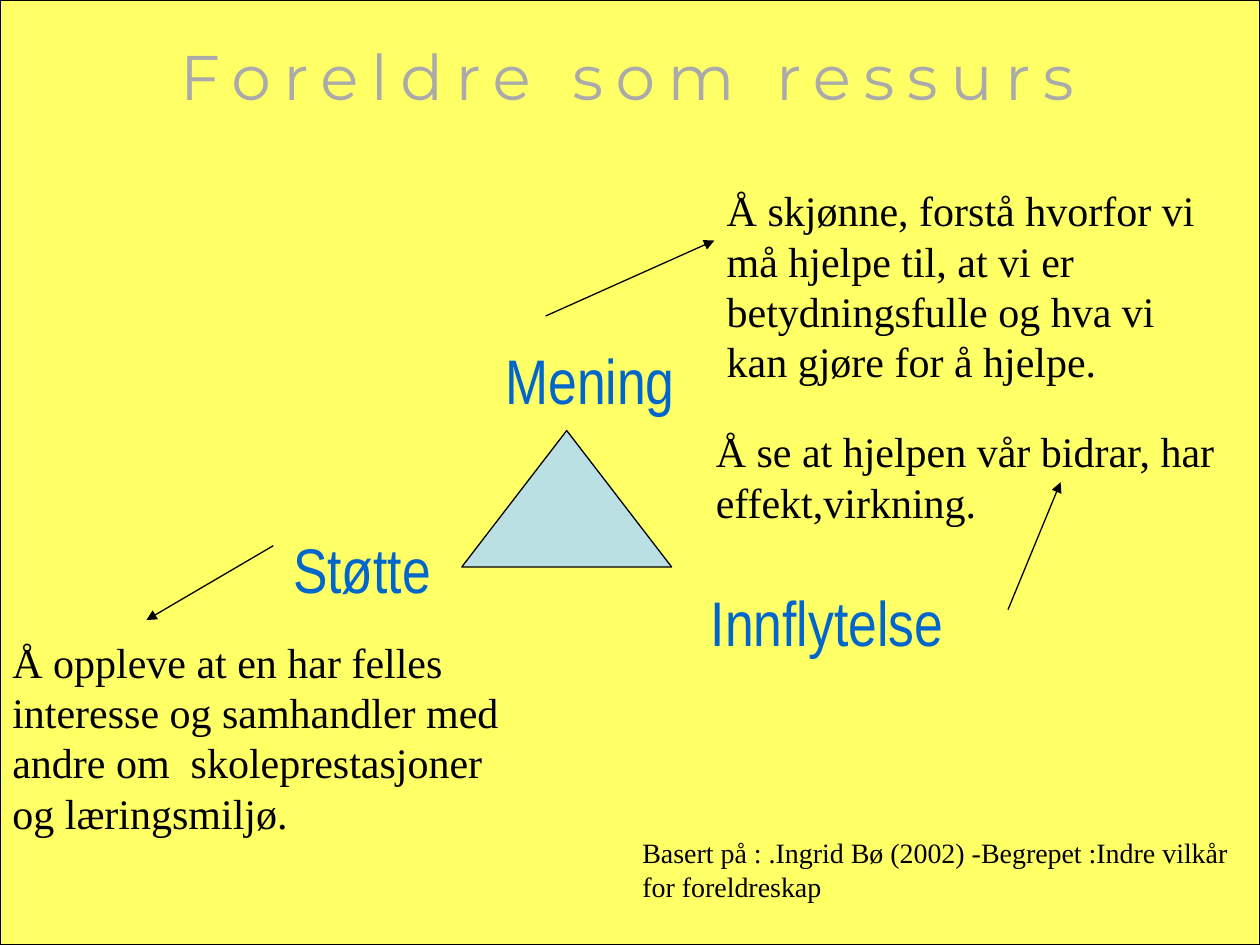
"""Build the slide on parents as a resource: three concepts around a triangle."""
import pptx
import pptx.util
import pptx.dml.color
import pptx.enum.shapes
import pptx.enum.text
import pptx.oxml.ns
from lxml import etree

Cm, Pt = pptx.util.Cm, pptx.util.Pt
KIND = pptx.enum.shapes.MSO_SHAPE
WIDE, HIGH = 25.4, 19.05

TITLE = ("Foreldre som ressurs", 3.1, 0.64, 19.1, 1.8)
LABELS = [
    ("Mening", 9.95, 6.77, 3.89, 1.58),
    ("Innflytelse", 13.54, 11.64, 6.27, 1.58),
    ("Støtte", 5.71, 10.58, 3.18, 1.58),
]
NOTES = [
    ("Å skjønne, forstå hvorfor vi må hjelpe til, at vi er betydningsfulle "
     "og hva vi kan gjøre for å hjelpe.", 14.4, 3.6, 10.36, 4.32, 24),
    ("Å se at hjelpen vår bidrar, har effekt,virkning.",
     14.18, 8.46, 11.22, 2.29, 24),
    ("Å oppleve at en har felles interesse og samhandler med andre om  "
     "skoleprestasjoner og læringsmiljø.", 0, 12.7, 10.58, 4.37, 24),
    ("Basert på : .Ingrid Bø (2002) -Begrepet :Indre vilkår for foreldreskap",
     12.7, 16.72, 12.7, 1.63, 16),
]
ARROWS = [
    (11, 6.37, 14.4, 4.85),
    (20.32, 12.29, 21.38, 9.72),
    (5.51, 11, 2.95, 12.5),
]
SHAPES = [
    (KIND.RECTANGLE, 0, 0, WIDE, HIGH, "FFFF66"),
    (KIND.FLOWCHART_EXTRACT, 9.31, 8.68, 4.23, 2.75, "BBE0E3"),
]


def tint(hue):
    return pptx.dml.color.RGBColor.from_string(hue)


def stroke(line):
    line.color.rgb = tint("000000")
    line.width = Pt(0.75)


def add_shape(slide, kind, x, y, w, h, hue):
    shape = slide.shapes.add_shape(kind, Cm(x), Cm(y), Cm(w), Cm(h))
    shape.shadow.inherit = False
    shape.fill.solid()
    shape.fill.fore_color.rgb = tint(hue)
    stroke(shape.line)


def add_text(slide, words, x, y, w, h, size, face, hue, wrap=False):
    box = slide.shapes.add_textbox(Cm(x), Cm(y), Cm(w), Cm(h))
    frame = box.text_frame
    frame.word_wrap = wrap
    frame.text = words
    para = frame.paragraphs[0]
    if not wrap:
        frame.margin_left = frame.margin_right = 0
        para.alignment = pptx.enum.text.PP_ALIGN.CENTER
    font = para.runs[0].font
    font.size, font.name = Pt(size), face
    font.color.rgb = tint(hue)
    return para


def add_arrow(slide, *ends):
    kind = pptx.enum.shapes.MSO_CONNECTOR.STRAIGHT
    arrow = slide.shapes.add_connector(kind, *map(Cm, ends))
    stroke(arrow.line)
    qn = pptx.oxml.ns.qn
    etree.SubElement(arrow.line._get_or_add_ln(), qn("a:tailEnd"), type="triangle")
    etree.SubElement(arrow._element.spPr, qn("a:effectLst"))


def main():
    deck = pptx.Presentation()
    deck.slide_width, deck.slide_height = Cm(WIDE), Cm(HIGH)
    slide = deck.slides.add_slide(deck.slide_layouts[6])
    for item in SHAPES:
        add_shape(slide, *item)
    title = add_text(slide, *TITLE, 36, "Montserrat", "AAAAAA")
    title.runs[0].font._element.set("spc", "720")
    for item in LABELS:
        add_text(slide, *item, 36, "Arial Narrow", "0066CC")
    for item in NOTES:
        para = add_text(slide, *item, "Times New Roman", "000000", wrap=True)
        para.space_before = Pt(item[-1] * 0.625)
    for ends in ARROWS:
        add_arrow(slide, *ends)
    deck.save("out.pptx")


if __name__ == "__main__":
    main()
